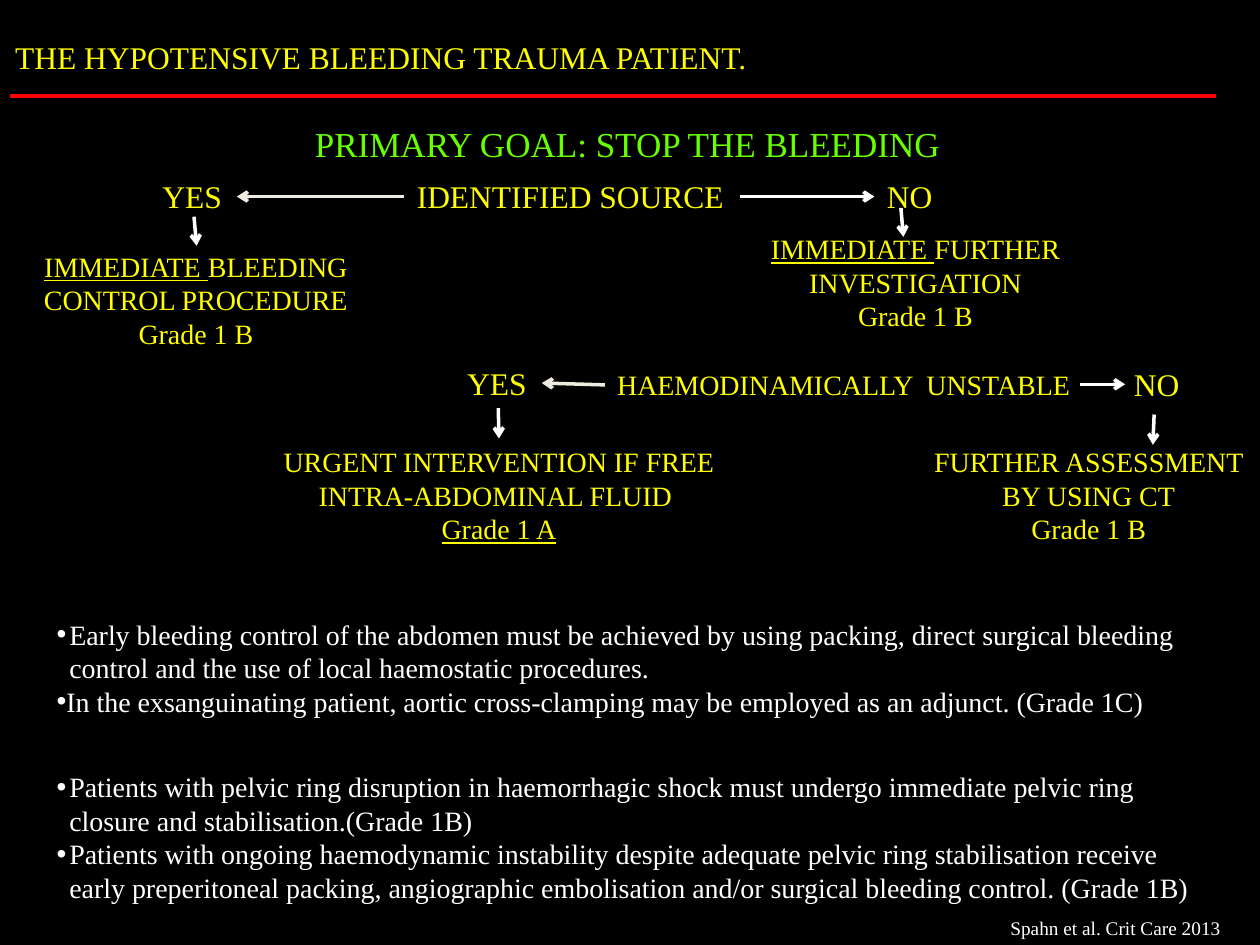
from lxml.etree import SubElement
from pptx import Presentation
from pptx.dml.color import RGBColor
from pptx.enum.shapes import MSO_CONNECTOR
from pptx.enum.text import MSO_ANCHOR, MSO_AUTO_SIZE, PP_ALIGN
from pptx.oxml.ns import qn
from pptx.util import Inches, Pt

BLACK = RGBColor(0x00, 0x00, 0x00)
WHITE = RGBColor(0xFF, 0xFF, 0xFF)
CREAM = RGBColor(0xEE, 0xEC, 0xE1)
YELLOW = RGBColor(0xFF, 0xFF, 0x00)
GREEN = RGBColor(0x66, 0xFF, 0x00)
RED = RGBColor(0xFF, 0x00, 0x00)
FONT = "Times New Roman"
TOP, LEFT, BOTTOM, RIGHT = range(4)

TITLE = "THE HYPOTENSIVE BLEEDING TRAUMA PATIENT."

# Single-line labels: name, text, (left, top, width, height), size, colour
LABELS = [
    ("goal", "PRIMARY GOAL: STOP THE BLEEDING", (2.4, 0.92, 5.21, 0.44), 20, GREEN),
    ("source", "IDENTIFIED SOURCE", (3.21, 1.36, 2.66, 0.4), 18, YELLOW),
    ("source yes", "YES", (1.19, 1.36, 0.69, 0.4), 18, YELLOW),
    ("source no", "NO", (6.94, 1.36, 0.58, 0.4), 18, YELLOW),
    ("unstable", "HAEMODINAMICALLY  UNSTABLE", (4.8, 2.87, 3.83, 0.37), 16, YELLOW),
    ("unstable yes", "YES", (3.61, 2.84, 0.69, 0.4), 18, YELLOW),
    ("unstable no", "NO", (8.9, 2.85, 0.58, 0.4), 18, YELLOW),
    ("citation", "Spahn et al. Crit Care 2013", (7.92, 7.22, 1.88, 0.29), 11, WHITE),
]

# Outcomes: name, box, paragraphs of (text, underlined) runs
OUTCOMES = [
    ("control", (-0.28, 1.93, 3.67, 0.91),
     [[("IMMEDIATE ", True), ("BLEEDING CONTROL PROCEDURE", False)],
      [("Grade 1 B", False)]]),
    ("investigation", (5.37, 1.79, 3.79, 0.91),
     [[("IMMEDIATE ", True), ("FURTHER INVESTIGATION", False)],
      [("Grade 1 B", False)]]),
    ("intervention", (2.1, 3.48, 3.72, 0.91),
     [[("URGENT INTERVENTION IF FREE INTRA-ABDOMINAL FLUID ", False)],
      [("Grade 1 A", True)]]),
    ("assessment", (7.15, 3.48, 2.98, 0.91),
     [[("FURTHER ASSESSMENT BY USING CT", False)],
      [("Grade 1 B", False)]]),
]

# Recommendations: box, list of (text, hanging indent)
RECOMMENDATIONS = [
    ((0.35, 4.85, 9.65, 0.91), [
        ("Early bleeding control of the abdomen must be achieved by using packing, "
         "direct surgical bleeding control and the use of local haemostatic "
         "procedures.", 0.1),
        ("In the exsanguinating patient, aortic cross-clamping may be employed as "
         "an adjunct. (Grade 1C)", 0)]),
    ((0.35, 6.06, 9.29, 1.18), [
        ("Patients with pelvic ring disruption in haemorrhagic shock must undergo "
         "immediate pelvic ring closure and stabilisation.(Grade 1B)", 0.1),
        ("Patients with ongoing haemodynamic instability despite adequate pelvic "
         "ring stabilisation receive early preperitoneal packing, angiographic "
         "embolisation and/or surgical bleeding control. (Grade 1B)", 0.1)]),
]

# Arrows that join two boxes: start, side, end, side, colour
JOINED_ARROWS = [
    ("source", LEFT, "source yes", RIGHT, CREAM),
    ("source", RIGHT, "source no", LEFT, WHITE),
    ("unstable", LEFT, "unstable yes", RIGHT, CREAM),
    ("unstable yes", BOTTOM, "intervention", TOP, WHITE),
]
# Arrows that stand free: start point, end point
FREE_ARROWS = [
    ((1.54, 1.72), (1.56, 1.95)),
    ((7.15, 1.65), (7.17, 1.88)),
    ((8.57, 3.05), (8.93, 3.05)),
    ((9.16, 3.29), (9.15, 3.53)),
]


def place(shape, box):
    shape.left, shape.top, shape.width, shape.height = map(Inches, box)


def write(shape, paragraphs, size=16, color=YELLOW, align=PP_ALIGN.LEFT, wrap=True,
          anchor=MSO_ANCHOR.TOP):
    """Fill a shape with paragraphs, each a list of (text, underlined) runs."""
    frame = shape.text_frame
    frame.word_wrap = wrap
    frame.auto_size = MSO_AUTO_SIZE.SHAPE_TO_FIT_TEXT
    frame.vertical_anchor = anchor
    for index, runs in enumerate(paragraphs):
        paragraph = frame.add_paragraph() if index else frame.paragraphs[0]
        paragraph.alignment = align
        paragraph.space_before = Pt(0)
        for text, underlined in runs:
            run = paragraph.add_run()
            run.text = text
            run.font.name = FONT
            run.font.size = Pt(size)
            run.font.color.rgb = color
            if underlined:
                run.font.underline = True


def add_bullet(paragraph, hanging):
    properties = paragraph._p.get_or_add_pPr()
    properties.set("marL", str(Inches(hanging)))
    properties.set("indent", str(-Inches(hanging)))
    SubElement(properties, qn("a:buFont")).set("typeface", "Arial")
    SubElement(properties, qn("a:buChar")).set("char", "•")


def add_line(slide, start, end, color, arrow=True):
    line = slide.shapes.add_connector(
        MSO_CONNECTOR.STRAIGHT, *map(Inches, (*start, *end)))
    line.line.color.rgb = color
    line.line.width = Pt(2)
    if arrow:
        SubElement(line.line._get_or_add_ln(), qn("a:tailEnd")).set("type", "arrow")
    SubElement(line._element.spPr, qn("a:effectLst"))
    return line


def main():
    presentation = Presentation()
    presentation.slide_width = Inches(10)
    presentation.slide_height = Inches(7.5)
    slide = presentation.slides.add_slide(presentation.slide_layouts[3])
    slide.background.fill.solid()
    slide.background.fill.fore_color.rgb = BLACK

    title, *bodies = slide.placeholders
    place(title, (0.02, 0.25, 9.14, 0.4))
    write(title, [[(TITLE, False)]], size=18)
    add_line(slide, (0.08, 0.76), (9.65, 0.76), RED, arrow=False)

    for body, (box, items) in zip(bodies, RECOMMENDATIONS):
        place(body, box)
        write(body, [[(text, False)] for text, _ in items], color=WHITE)
        for paragraph, (_, hanging) in zip(body.text_frame.paragraphs, items):
            add_bullet(paragraph, hanging)

    boxes = {}
    for name, text, box, size, color in LABELS:
        boxes[name] = slide.shapes.add_textbox(*map(Inches, box))
        write(boxes[name], [[(text, False)]], size=size, color=color, wrap=False)
    for name, box, paragraphs in OUTCOMES:
        boxes[name] = slide.shapes.add_textbox(*map(Inches, box))
        write(boxes[name], paragraphs, align=PP_ALIGN.CENTER)

    for start, start_side, end, end_side, color in JOINED_ARROWS:
        arrow = add_line(slide, (0, 0), (0, 0), color)
        arrow.begin_connect(boxes[start], start_side)
        arrow.end_connect(boxes[end], end_side)
    for start, end in FREE_ARROWS:
        add_line(slide, start, end, WHITE)

    presentation.save("out.pptx")


if __name__ == "__main__":
    main()
